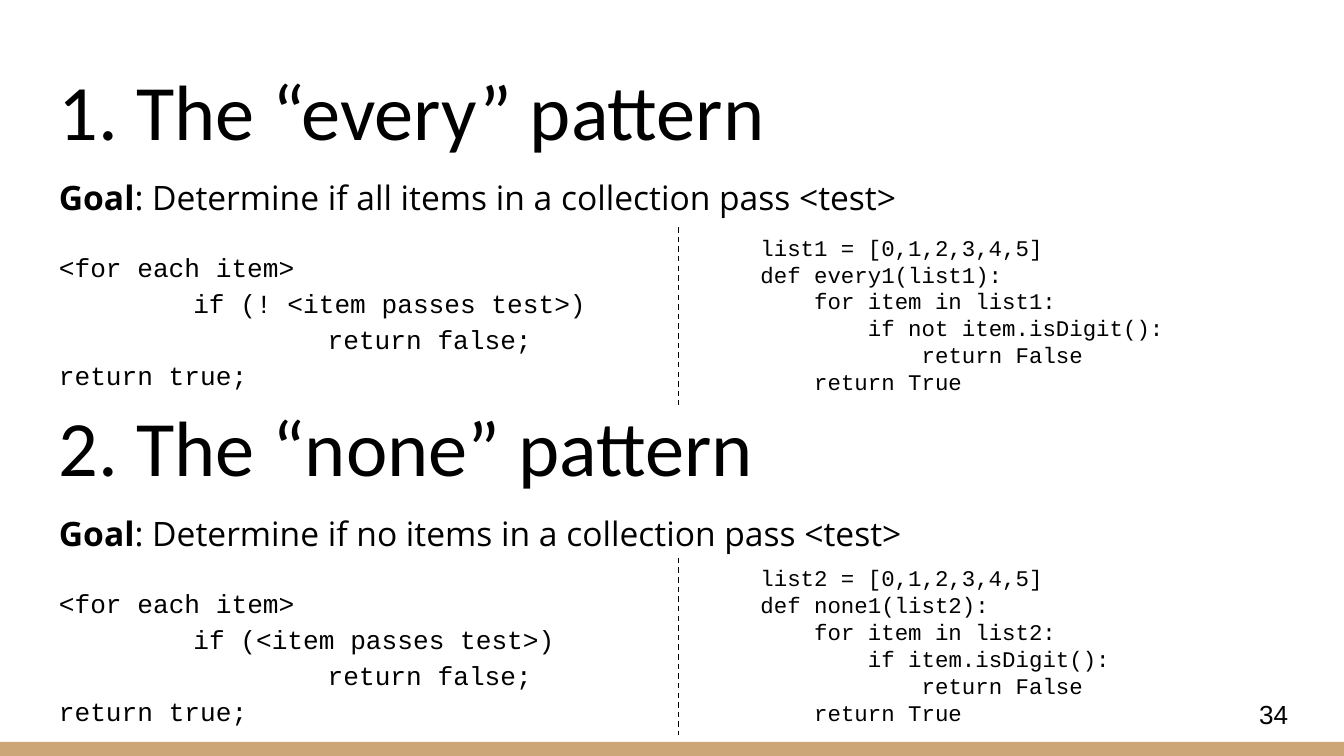
import dataclasses

import pptx
import pptx.dml.color
import pptx.enum.dml
import pptx.enum.shapes
import pptx.enum.text
import pptx.oxml.ns
import pptx.util
from lxml import etree

Inches = pptx.util.Inches
Pt = pptx.util.Pt
Anchor = pptx.enum.text.MSO_ANCHOR
AutoSize = pptx.enum.text.MSO_AUTO_SIZE
qualified = pptx.oxml.ns.qn


@dataclasses.dataclass(frozen=True)
class Theme:
    ink: str = "000000"
    band: str = "CCA677"
    title: tuple = ("Calibri", 42)
    goal: tuple = ("Open Sans", 18)
    pseudocode: tuple = ("Courier New", 14)
    code: tuple = ("Courier New", 12)
    number: tuple = ("Arial", 14)


THEME = Theme()
SLIDE_WIDTH = 10
SLIDE_HEIGHT = SLIDE_WIDTH * 9 / 16
CODE_INDENT = 0.4
TAB_STOPS = (1, 2)

PATTERNS = [
    {
        "box": (0.34, 0.35, 9.32, 2.72),
        "explanation_width": 6.44,
        "code_offset": 1.34,
        "title": "1. The “every” pattern",
        "goal": ": Determine if all items in a collection pass <test>",
        "condition": "! <item passes test>",
        "code": [
            (0, "list1 = [0,1,2,3,4,5]"),
            (0, "def every1(list1):"),
            (1, "for item in list1:"),
            (2, "if not item.isDigit():"),
            (3, "return False"),
            (1, "return True"),
        ],
    },
    {
        "box": (0.34, 2.85, 9.32, 2.6),
        "explanation_width": 6.49,
        "code_offset": 1.3,
        "title": "2. The “none” pattern",
        "goal": ": Determine if no items in a collection pass <test>",
        "condition": "<item passes test>",
        "code": [
            (0, "list2 = [0,1,2,3,4,5]"),
            (0, "def none1(list2):"),
            (1, "for item in list2:"),
            (2, "if item.isDigit():"),
            (3, "return False"),
            (1, "return True"),
        ],
    },
]


def apply_format(target, values):
    for name, value in values.items():
        setattr(target, name, value)


def add_run(paragraph, text, style, bold=False):
    run = paragraph.add_run()
    run.text = text
    name, size = style
    apply_format(run.font, {"name": name, "size": Pt(size), "bold": bold})
    run.font.color.rgb = pptx.dml.color.RGBColor.from_string(THEME.ink)


def add_text_frame(slide, box, anchor=Anchor.TOP, inset=0.1, auto_size=AutoSize.NONE):
    shape = slide.shapes.add_textbox(*map(Inches, box))
    apply_format(shape.text_frame, {
        "word_wrap": True,
        "auto_size": auto_size,
        "vertical_anchor": anchor,
        "margin_left": Inches(0.1),
        "margin_right": Inches(0.1),
        "margin_top": Inches(inset),
        "margin_bottom": Inches(inset),
    })
    return shape.text_frame


def add_title(slide, box, text):
    frame = add_text_frame(slide, box, Anchor.BOTTOM)
    add_run(frame.paragraphs[0], text, THEME.title)


def add_tab_stops(paragraph):
    tab_list = etree.SubElement(paragraph._p.get_or_add_pPr(), qualified("a:tabLst"))
    for stop in TAB_STOPS:
        tab = etree.SubElement(tab_list, qualified("a:tab"))
        tab.set("pos", str(Inches(stop)))
        tab.set("algn", "l")


def add_explanation(slide, box, goal, condition):
    frame = add_text_frame(slide, box)
    goal_paragraph, pseudocode_paragraph = frame.paragraphs[0], frame.add_paragraph()
    for paragraph in frame.paragraphs:
        apply_format(paragraph, {"line_spacing": 1.15, "space_after": Pt(16)})
    add_run(goal_paragraph, "Goal", THEME.goal, bold=True)
    add_run(goal_paragraph, goal, THEME.goal)
    add_tab_stops(pseudocode_paragraph)
    lines = ["<for each item>", f"\tif ({condition})", "\t\treturn false;", "return true;"]
    for index, line in enumerate(lines):
        if index:
            pseudocode_paragraph.add_line_break()
        add_run(pseudocode_paragraph, line, THEME.pseudocode)
    name, size = THEME.pseudocode
    for line_break in pseudocode_paragraph._p.findall(qualified("a:br")):
        properties = etree.SubElement(line_break, qualified("a:rPr"))
        properties.set("sz", str(size * 100))
        etree.SubElement(properties, qualified("a:latin")).set("typeface", name)


def add_code(slide, box, lines):
    frame = add_text_frame(slide, box, inset=0.05, auto_size=AutoSize.SHAPE_TO_FIT_TEXT)
    for index, (level, line) in enumerate(lines):
        paragraph = frame.add_paragraph() if index else frame.paragraphs[0]
        paragraph._p.get_or_add_pPr().set("marL", str(Inches(level * CODE_INDENT)))
        add_run(paragraph, line, THEME.code)


def add_divider(slide, left, top, height):
    connector = slide.shapes.add_connector(
        pptx.enum.shapes.MSO_CONNECTOR.STRAIGHT,
        *map(Inches, (left, top, left, top + height)))
    connector.line.color.rgb = pptx.dml.color.RGBColor.from_string(THEME.ink)
    apply_format(connector.line, {
        "width": Pt(0.75),
        "dash_style": pptx.enum.dml.MSO_LINE.DASH,
    })
    etree.SubElement(connector._element.spPr, qualified("a:effectLst"))


def add_pattern(slide, box, explanation_width, code_offset, title, goal, condition, code):
    left, top, width, height = box
    code_top = top + code_offset
    add_title(slide, (left, top, width, 0.91), title)
    add_explanation(
        slide, (left, top + 0.82, explanation_width, height - 0.82), goal, condition)
    add_code(slide, (left + 5.22, code_top, 5, 1.31), code)
    add_divider(slide, left + 4.71, code_top, 1.32)


def add_footer(slide, box, number):
    left, top, width, height = box
    band = slide.shapes.add_shape(
        pptx.enum.shapes.MSO_SHAPE.RECTANGLE, *map(Inches, box))
    band.shadow.inherit = False
    band.fill.solid()
    band.fill.fore_color.rgb = pptx.dml.color.RGBColor.from_string(THEME.band)
    band.line.fill.background()
    frame = add_text_frame(
        slide, (left + width - 0.73, top - 0.42, 0.6, 0.43), Anchor.MIDDLE)
    add_run(frame.paragraphs[0], number, THEME.number)


def main():
    presentation = pptx.Presentation()
    apply_format(presentation, {
        "slide_width": Inches(SLIDE_WIDTH),
        "slide_height": Inches(SLIDE_HEIGHT),
    })
    slide = presentation.slides.add_slide(presentation.slide_layouts[6])
    add_footer(slide, (0, 5.52, SLIDE_WIDTH, 0.11), "34")
    for pattern in PATTERNS:
        add_pattern(slide, **pattern)
    presentation.save("out.pptx")


if __name__ == "__main__":
    main()
